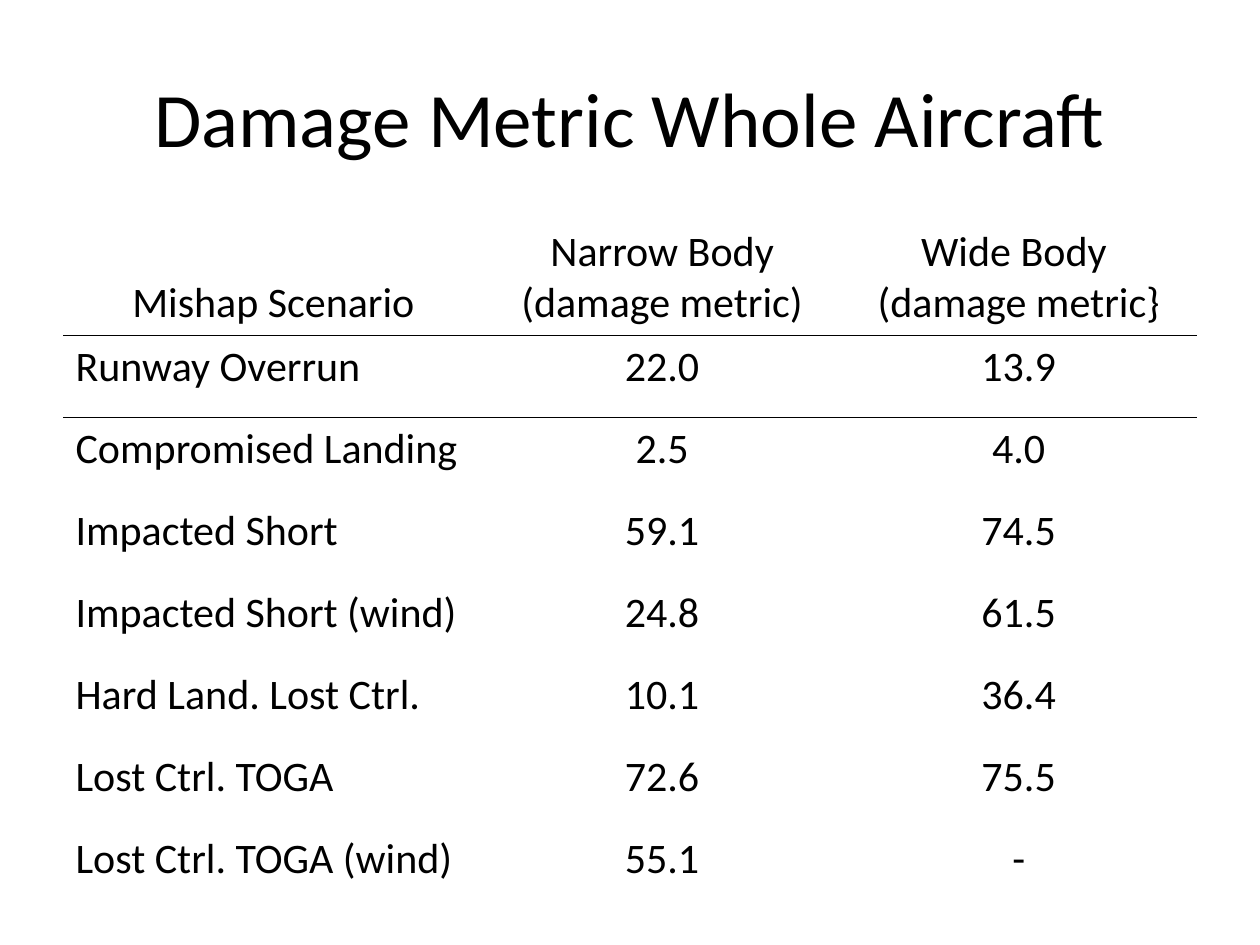
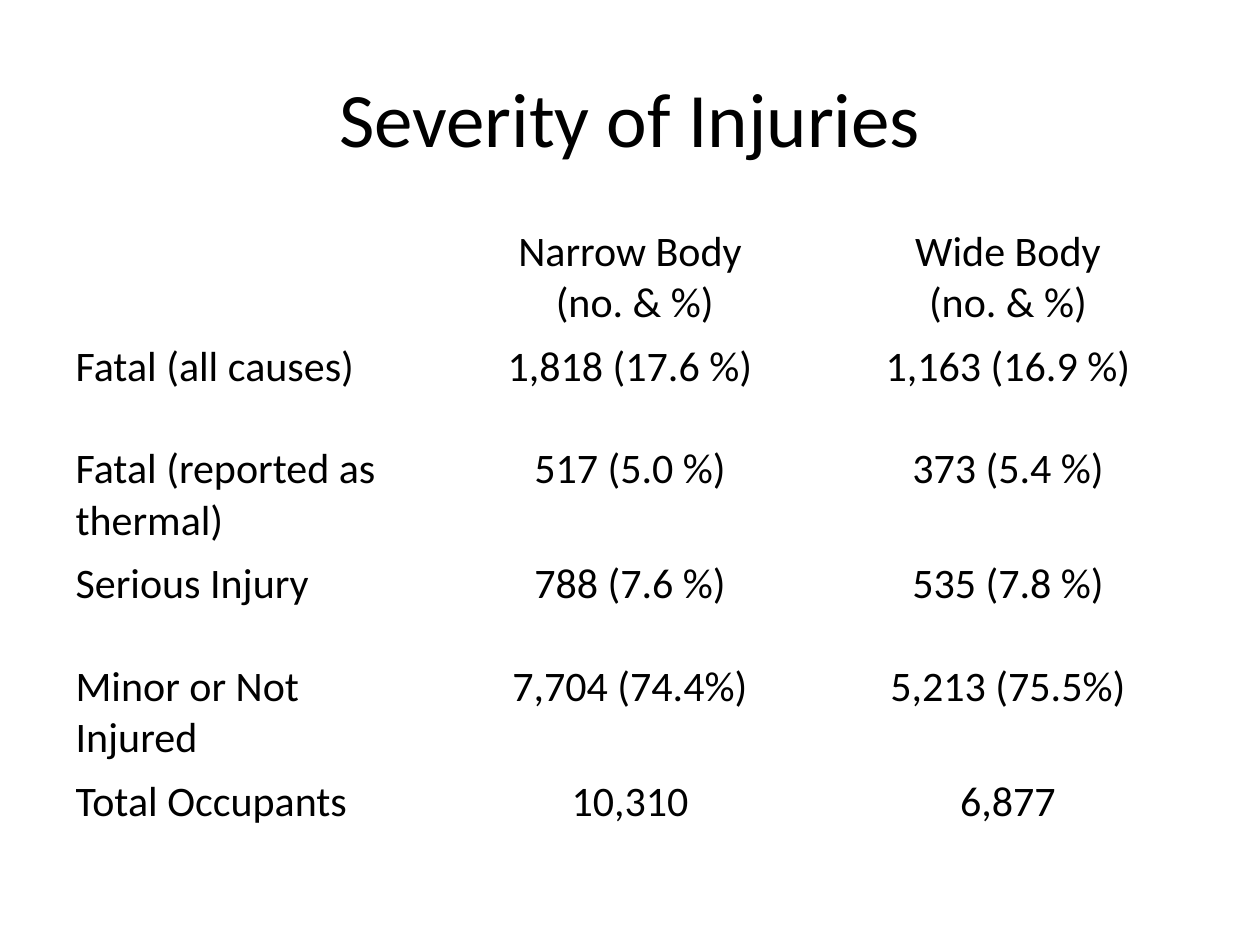
from lxml import etree
from pptx import Presentation
from pptx.dml.color import RGBColor
from pptx.enum.text import MSO_ANCHOR, PP_ALIGN
from pptx.oxml.ns import qn
from pptx.util import Inches, Pt

CENTER, LEFT = PP_ALIGN.CENTER, PP_ALIGN.LEFT
TOP, MIDDLE, BOTTOM = MSO_ANCHOR.TOP, MSO_ANCHOR.MIDDLE, MSO_ANCHOR.BOTTOM

FONT, INK = "Calibri", "000000"
TITLE_SIZE, TABLE_SIZE = 44, 24
SLIDE_WIDTH, SLIDE_HEIGHT = 10, 7.5
MARGIN = 0.5
CONTENT_WIDTH = SLIDE_WIDTH - 2 * MARGIN
TITLE_TOP, TITLE_HEIGHT = 0.3, 1.25
TABLE_TOP = 1.75
NO_STYLE_NO_GRID = "{2D5ABB26-0587-4C30-8999-92F81FD0307C}"

SLIDES = [
    {
        "title": "Damage Metric Whole Aircraft",
        "column_widths": [3.34, 2.83, 2.83],
        "row_height": 0.65,
        "ruled_rows": [0, 1],
        "rows": [
            ("Mishap Scenario", "Narrow Body (damage metric)", "Wide Body \n(damage metric}"),
            ("Runway Overrun", "22.0", "13.9"),
            ("Compromised Landing", "2.5", "4.0"),
            ("Impacted Short", "59.1", "74.5"),
            ("Impacted Short (wind)", "24.8", "61.5"),
            ("Hard Land. Lost Ctrl.", "10.1", "36.4"),
            ("Lost Ctrl. TOGA", "72.6", "75.5"),
            ("Lost Ctrl. TOGA (wind)", "55.1", "-"),
        ],
    },
    {
        "title": "Severity of Injuries",
        "column_widths": [CONTENT_WIDTH / 3] * 3,
        "row_height": 0.81,
        "ruled_rows": [],
        "rows": [
            ("", "Narrow Body\n (no. & %)", "Wide Body\n(no. & %)"),
            ("Fatal (all causes)", "1,818 (17.6 %)", "1,163 (16.9 %)"),
            ("Fatal (reported as thermal)", "517 (5.0 %)", "373 (5.4 %)"),
            ("Serious Injury", "788 (7.6 %)", "535 (7.8 %)"),
            ("Minor or Not Injured", "7,704 (74.4%)", "5,213 (75.5%)"),
            ("Total Occupants", "10,310", "6,877"),
        ],
    },
]


def color(hex_string):
    return RGBColor.from_string(hex_string)


def set_text(text_frame, text, size, alignment):
    text_frame.text = text
    for paragraph in text_frame.paragraphs:
        paragraph.alignment = alignment
        for run in paragraph.runs:
            run.font.name = FONT
            run.font.size = Pt(size)
            run.font.color.rgb = color(INK)


def add_title(slide, text):
    title = slide.shapes.title
    title.left, title.top = Inches(MARGIN), Inches(TITLE_TOP)
    title.width, title.height = Inches(CONTENT_WIDTH), Inches(TITLE_HEIGHT)
    title.text_frame.vertical_anchor = MIDDLE
    set_text(title.text_frame, text, TITLE_SIZE, CENTER)


def rule_below(cell, points=1):
    """Draw the cell's bottom border; borders must precede the fill in the XML."""
    properties = cell._tc.get_or_add_tcPr()
    line = etree.Element(qn("a:lnB"), w=str(Pt(points)))
    fill = etree.SubElement(line, qn("a:solidFill"))
    etree.SubElement(fill, qn("a:srgbClr"), val=INK)
    properties.insert(0, line)


def add_data_table(slide, content):
    rows, widths = content["rows"], content["column_widths"]
    row_height = Inches(content["row_height"])
    frame = slide.shapes.add_table(
        len(rows), len(widths), Inches(MARGIN), Inches(TABLE_TOP),
        Inches(CONTENT_WIDTH), row_height * len(rows))
    table = frame.table
    table.first_row = table.horz_banding = False
    table._tbl.tblPr.find(qn("a:tableStyleId")).text = NO_STYLE_NO_GRID

    for column, width in zip(table.columns, widths):
        column.width = Inches(width)
    for row_index, texts in enumerate(rows):
        table.rows[row_index].height = row_height
        for column_index, text in enumerate(texts):
            is_header, is_label = row_index == 0, column_index == 0
            cell = table.cell(row_index, column_index)
            cell.fill.background()
            cell.vertical_anchor = BOTTOM if is_header and is_label else TOP
            alignment = LEFT if is_label and not is_header else CENTER
            set_text(cell.text_frame, text, TABLE_SIZE, alignment)
            if row_index in content["ruled_rows"]:
                rule_below(cell)


def main():
    presentation = Presentation()
    presentation.slide_width = Inches(SLIDE_WIDTH)
    presentation.slide_height = Inches(SLIDE_HEIGHT)
    title_only = presentation.slide_layouts.get_by_name("Title Only")
    for content in SLIDES:
        slide = presentation.slides.add_slide(title_only)
        add_title(slide, content["title"])
        add_data_table(slide, content)
    presentation.save("out.pptx")


if __name__ == "__main__":
    main()
